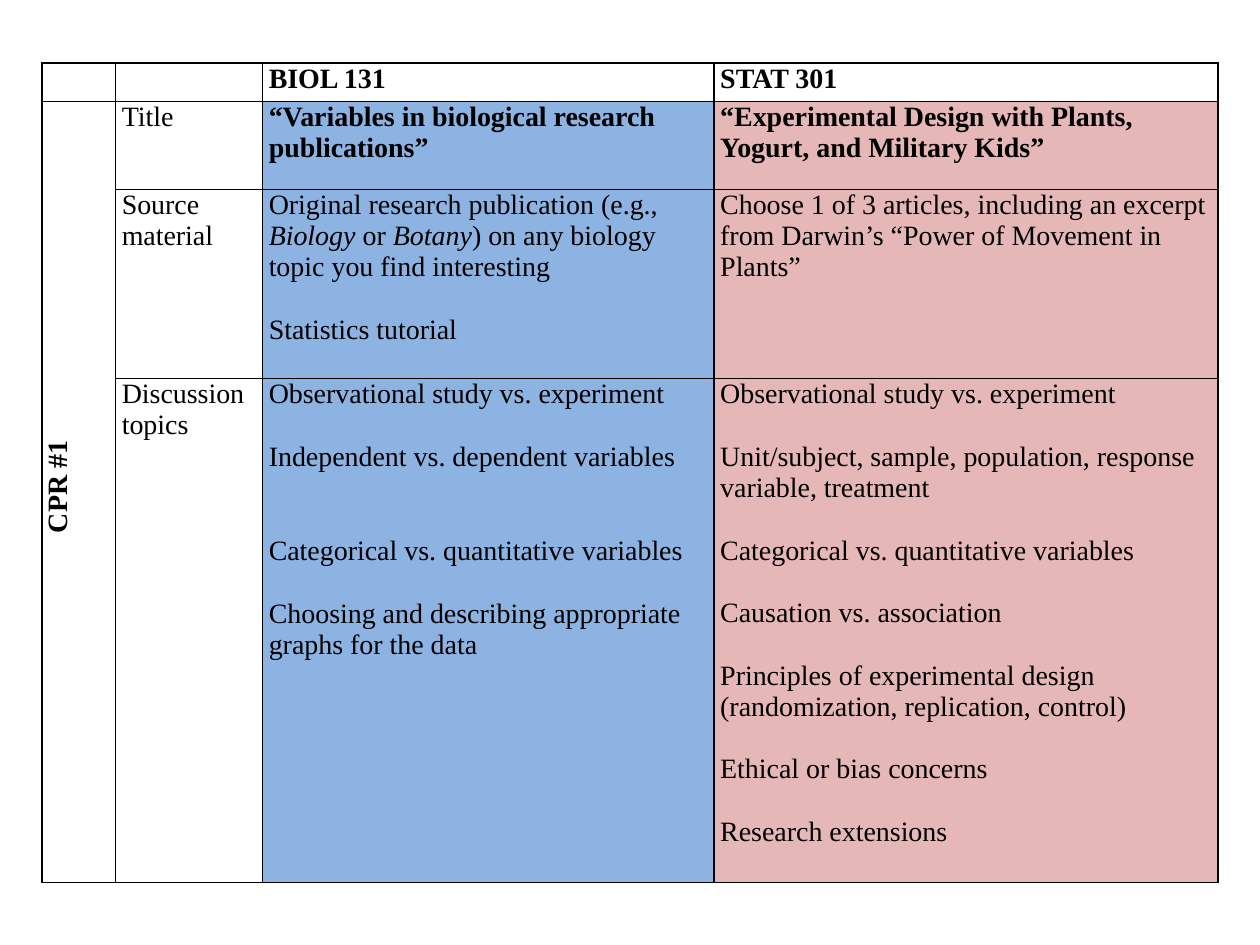
from pptx import Presentation
from pptx.dml.color import RGBColor
from pptx.enum.text import MSO_ANCHOR, PP_ALIGN
from pptx.oxml.ns import qn
from pptx.util import Pt
from lxml import etree

MIDDLE = MSO_ANCHOR.MIDDLE
CENTER = PP_ALIGN.CENTER
BLACK = RGBColor(0x00, 0x00, 0x00)
BLUE = RGBColor(0x8D, 0xB3, 0xE2)
PINK = RGBColor(0xE5, 0xB8, 0xB7)
FONT = "Times New Roman"
SIZE = Pt(16)
LINE = 18  # height of one text line, in points

COLS = [42, 84, 258, 288]
ROWS = [21.6, 50.4, 108, 288]
FILLS = [None, None, BLUE, PINK]

# A cell is a list of paragraphs; a paragraph is a list of (text, italic) runs
SOURCE = [
    [("Original research publication (e.g., ", False), ("Biology", True),
     (" or ", False), ("Botany", True),
     (") on any biology topic you find interesting", False)],
    [("Statistics tutorial", False)],
]
BIOL = [
    "Observational study vs. experiment",
    "Independent vs. dependent variables",
    "Categorical vs. quantitative variables",
    "Choosing and describing appropriate graphs for the data",
]
STAT = [
    "Observational study vs. experiment",
    "Unit/subject, sample, population, response variable, treatment",
    "Categorical vs. quantitative variables",
    "Causation vs. association",
    "Principles of experimental design (randomization, replication, control)",
    "Ethical or bias concerns",
    "Research extensions",
]


def plain(*texts):
    return [[(text, False)] for text in texts]


CELLS = [
    [[], [], plain("BIOL 131"), plain("STAT 301")],
    [plain("CPR #1"), plain("Title"),
     plain("“Variables in biological research publications”"),
     plain("“Experimental Design with Plants, Yogurt, and Military Kids”")],
    [[], plain("Source material"), SOURCE,
     plain("Choose 1 of 3 articles, including an excerpt from Darwin’s "
           "“Power of Movement in Plants”")],
    [[], plain("Discussion topics"), plain(*BIOL), plain(*STAT)],
]


def add_lines(cell):
    """Draw a black one-point border on every side."""
    props = cell._tc.get_or_add_tcPr()
    for side in ("a:lnL", "a:lnR", "a:lnT", "a:lnB"):
        line = etree.SubElement(props, qn(side), w=str(Pt(1)))
        fill = etree.SubElement(line, qn("a:solidFill"))
        etree.SubElement(fill, qn("a:srgbClr"), val=str(BLACK))


def style_cell(cell, color):
    cell.margin_left = cell.margin_right = Pt(3.6)
    cell.margin_top = cell.margin_bottom = 0
    add_lines(cell)
    if color is None:
        cell.fill.background()
    else:
        cell.fill.solid()
        cell.fill.fore_color.rgb = color


def write_cell(cell, paras, bold):
    frame = cell.text_frame
    for i, runs in enumerate(paras):
        para = frame.add_paragraph() if i else frame.paragraphs[0]
        if i:
            para.space_before = Pt(LINE)
        for text, italic in runs:
            run = para.add_run()
            run.text = text
            font = run.font
            font.name, font.size = FONT, SIZE
            font.bold, font.italic = bold, italic
            font.color.rgb = BLACK


def add_grid(slide, left, top, width, height):
    frame = slide.shapes.add_table(len(ROWS), len(COLS), Pt(left), Pt(top),
                                   Pt(width), Pt(height))
    table = frame.table
    table.first_row = table.horz_banding = False
    for col, size in zip(table.columns, COLS):
        col.width = Pt(size)
    for row, size in zip(table.rows, ROWS):
        row.height = Pt(size)

    # Text, fills and borders
    for r, row in enumerate(CELLS):
        for c, paras in enumerate(row):
            cell = table.cell(r, c)
            style_cell(cell, FILLS[c] if r else None)
            write_cell(cell, paras, r == 0 or c == 0 or (r == 1 and c > 1))

    # Extra line that keeps the shared topic level in both courses
    topics = table.cell(3, 2).text_frame.paragraphs
    topics[2].space_before = Pt(2 * LINE)

    # Upright label over the three lower rows
    label = table.cell(1, 0)
    label.merge(table.cell(3, 0))
    label.vertical_anchor = MIDDLE
    label._tc.get_or_add_tcPr().set("vert", "vert270")
    para = label.text_frame.paragraphs[0]
    para.alignment = CENTER
    para._p.get_or_add_pPr().set("marL", str(Pt(6)))


def main():
    deck = Presentation()
    deck.slide_width, deck.slide_height = Pt(720), Pt(540)
    slide = deck.slides.add_slide(deck.slide_layouts[6])
    add_grid(slide, 24, 36, sum(COLS), sum(ROWS))
    deck.save("out.pptx")


if __name__ == "__main__":
    main()
